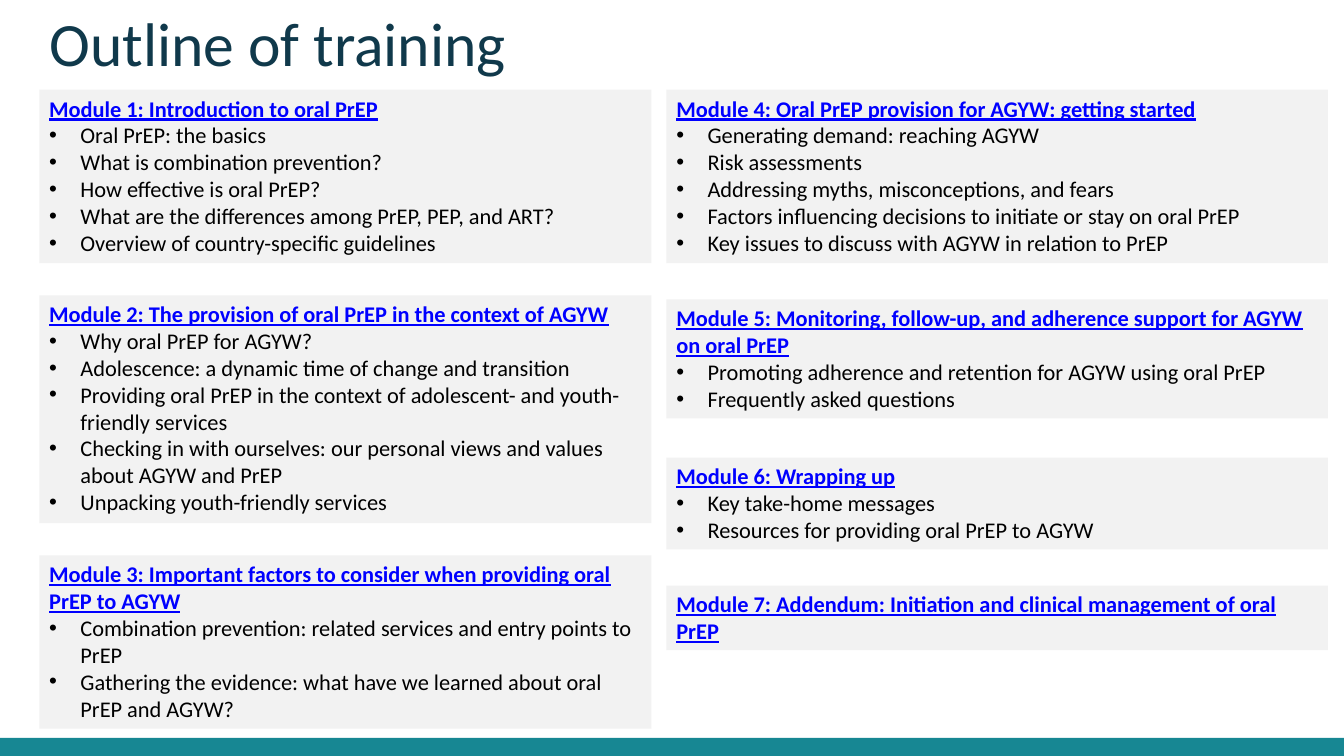
from lxml import etree
from pptx import Presentation
from pptx.dml.color import RGBColor
from pptx.enum.shapes import MSO_SHAPE as Preset
from pptx.enum.text import MSO_ANCHOR as Anchor, MSO_AUTO_SIZE as AutoSize, PP_ALIGN as Align
from pptx.oxml.ns import qn
from pptx.util import Inches, Pt

FONT = "Calibri"
TEAL = RGBColor(0x17, 0x87, 0x93)
NAVY = RGBColor(0x10, 0x39, 0x4B)
PANEL_GREY = RGBColor(0xF2, 0xF2, 0xF2)
HEADING_BLUE = RGBColor(0x00, 0x00, 0xFF)
BLACK = RGBColor(0x00, 0x00, 0x00)

# Column grid in inches: left edge and width
LEFT_COLUMN = (0.39, 6.07)
RIGHT_COLUMN = (6.61, 6.56)

# Panel height follows from its number of text lines
LINE_HEIGHT = 0.27
PANEL_PADDING = 0.1
BULLET_INDENT = Inches(0.31)

# Column, top, number of lines, heading, topics
MODULES = [
    (LEFT_COLUMN, 0.89, 6, "Module 1: Introduction to oral PrEP", [
        "Oral PrEP: the basics",
        "What is combination prevention?",
        "How effective is oral PrEP?",
        "What are the differences among PrEP, PEP, and ART?",
        "Overview of country-specific guidelines",
    ]),
    (LEFT_COLUMN, 2.93, 8, "Module 2: The provision of oral PrEP in the context of AGYW", [
        "Why oral PrEP for AGYW?",
        "Adolescence: a dynamic time of change and transition",
        "Providing oral PrEP in the context of adolescent- and youth-friendly services",
        "Checking in with ourselves: our personal views and values about AGYW and PrEP",
        "Unpacking youth-friendly services",
    ]),
    (LEFT_COLUMN, 5.51, 6,
     "Module 3: Important factors to consider when providing oral PrEP to AGYW", [
         "Combination prevention: related services and entry points to PrEP",
         "Gathering the evidence: what have we learned about oral PrEP and AGYW?",
     ]),
    (RIGHT_COLUMN, 0.89, 6, "Module 4: Oral PrEP provision for AGYW: getting started", [
        "Generating demand: reaching AGYW",
        "Risk assessments",
        "Addressing myths, misconceptions, and fears",
        "Factors influencing decisions to initiate or stay on oral PrEP",
        "Key issues to discuss with AGYW in relation to PrEP",
    ]),
    (RIGHT_COLUMN, 2.97, 4,
     "Module 5: Monitoring, follow-up, and adherence support for AGYW on oral PrEP", [
         "Promoting adherence and retention for AGYW using oral PrEP",
         "Frequently asked questions",
     ]),
    (RIGHT_COLUMN, 4.54, 3, "Module 6: Wrapping up", [
        "Key take-home messages",
        "Resources for providing oral PrEP to AGYW",
    ]),
    (RIGHT_COLUMN, 5.81, 2,
     "Module 7: Addendum: Initiation and clinical management of oral PrEP", []),
]


def add_rectangle(slide, left, top, width, height, color):
    shape = slide.shapes.add_shape(
        Preset.RECTANGLE, Inches(left), Inches(top), Inches(width), Inches(height))
    shape.shadow.inherit = False
    shape.fill.solid()
    shape.fill.fore_color.rgb = color
    shape.line.fill.background()
    return shape


def add_run(paragraph, text, size, color, heading=False):
    paragraph.alignment = Align.LEFT
    run = paragraph.add_run()
    run.text = text
    run.font.name = FONT
    run.font.size = Pt(size)
    run.font.color.rgb = color
    run.font.bold = heading
    run.font.underline = heading


def add_bullet(paragraph):
    properties = paragraph._p.get_or_add_pPr()
    properties.set("marL", str(BULLET_INDENT))
    properties.set("indent", str(-BULLET_INDENT))
    etree.SubElement(properties, qn("a:buFont")).set("typeface", "Arial")
    etree.SubElement(properties, qn("a:buChar")).set("char", "•")


def set_title(slide, text):
    title = slide.shapes.title
    title.left, title.top = Inches(LEFT_COLUMN[0]), Inches(0.11)
    title.width, title.height = Inches(12), Inches(1.06)
    frame = title.text_frame
    frame.word_wrap = True
    frame.auto_size = AutoSize.NONE
    frame.vertical_anchor = Anchor.TOP
    paragraph = frame.paragraphs[0]
    paragraph.line_spacing = Pt(44.8)
    add_run(paragraph, text, 44, NAVY)


def add_module(slide, column, top, lines, heading, topics):
    left, width = column
    height = lines * LINE_HEIGHT + PANEL_PADDING
    frame = add_rectangle(slide, left, top, width, height, PANEL_GREY).text_frame
    frame.word_wrap = True
    frame.auto_size = AutoSize.SHAPE_TO_FIT_TEXT
    frame.vertical_anchor = Anchor.TOP
    add_run(frame.paragraphs[0], heading, 16, HEADING_BLUE, heading=True)
    for topic in topics:
        paragraph = frame.add_paragraph()
        add_run(paragraph, topic, 16, BLACK)
        add_bullet(paragraph)


def main():
    presentation = Presentation()
    presentation.slide_width = Inches(13.33)
    presentation.slide_height = Inches(7.5)
    slide = presentation.slides.add_slide(presentation.slide_layouts.get_by_name("Title Only"))

    # Title and footer band
    set_title(slide, "Outline of training")
    add_rectangle(slide, 0, 7.32, 13.33, 0.18, TEAL)

    # Module panels
    for module in MODULES:
        add_module(slide, *module)

    presentation.save("out.pptx")


if __name__ == "__main__":
    main()
